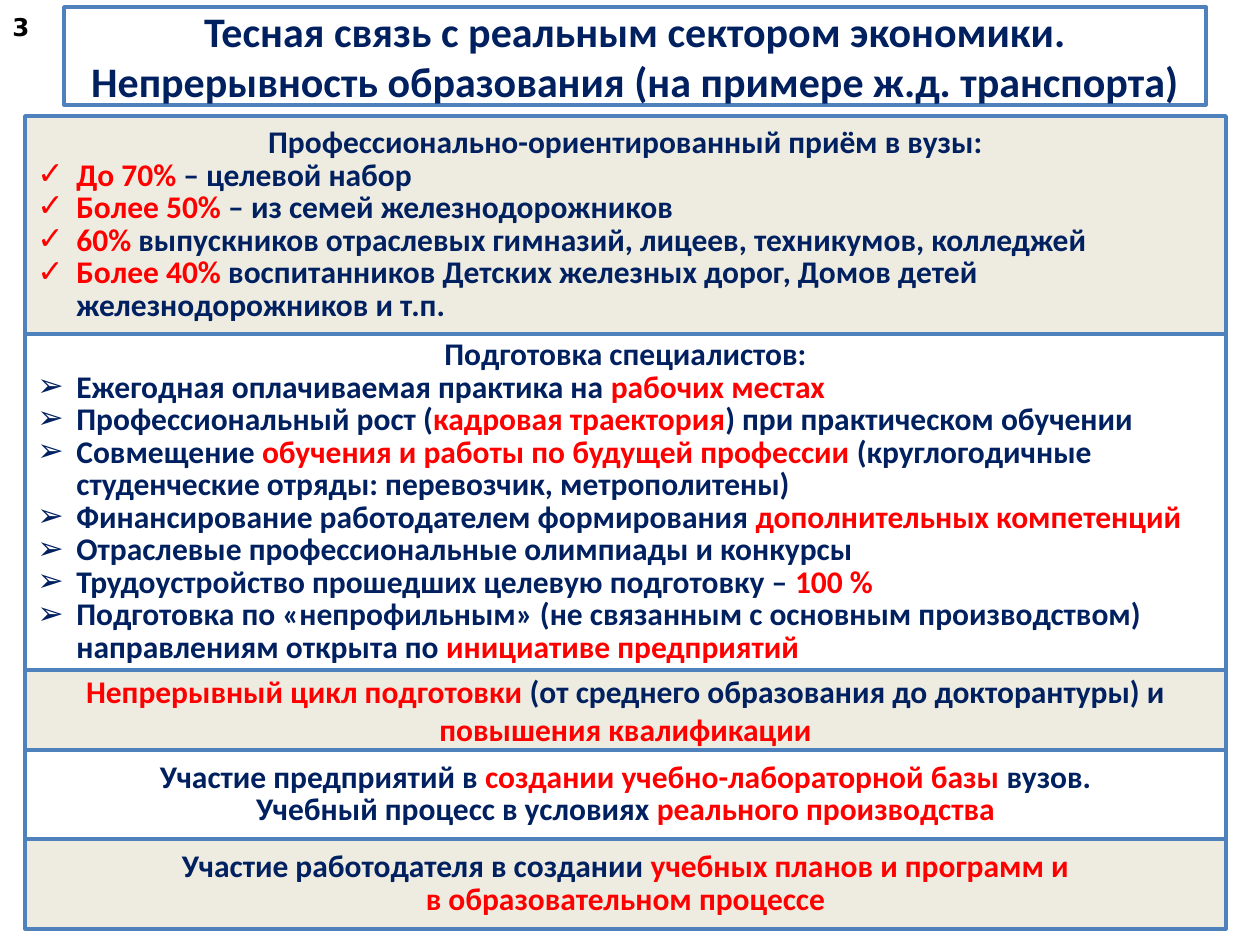
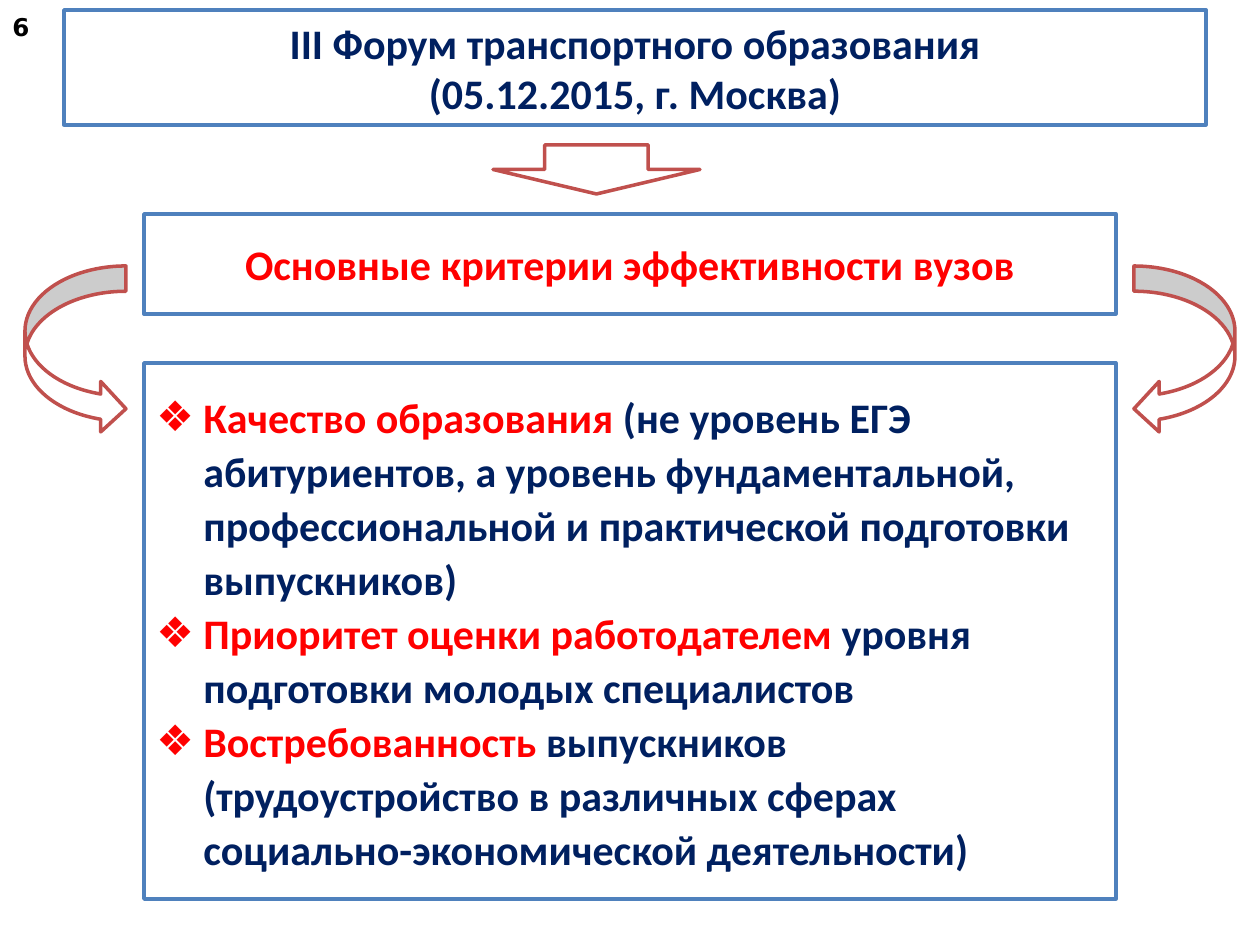
"""Build two slides on how transport education is tied to the industry."""
from lxml import etree
from pptx import Presentation
from pptx.dml.color import RGBColor
from pptx.enum.shapes import MSO_SHAPE
from pptx.enum.text import MSO_ANCHOR, PP_ALIGN
from pptx.oxml.ns import qn
from pptx.util import Pt

EMU_PER_PX = 914400 / 126
SLIDE_WIDTH, SLIDE_HEIGHT = 1260, 945

NAVY = RGBColor(0x00, 0x20, 0x60)
RED = RGBColor(0xFF, 0x00, 0x00)
BLACK = RGBColor(0x00, 0x00, 0x00)
WHITE = RGBColor(0xFF, 0xFF, 0xFF)
BEIGE = RGBColor(0xEE, 0xEC, 0xE1)
BLUE = RGBColor(0x4F, 0x81, 0xBD)
BRICK = RGBColor(0xC0, 0x50, 0x4D)

RECTANGLE = MSO_SHAPE.RECTANGLE
DOWN_ARROW = MSO_SHAPE.DOWN_ARROW
CURVED_RIGHT = MSO_SHAPE.CURVED_RIGHT_ARROW
CURVED_LEFT = MSO_SHAPE.CURVED_LEFT_ARROW
CENTER, LEFT = PP_ALIGN.CENTER, PP_ALIGN.LEFT
MIDDLE = MSO_ANCHOR.MIDDLE

BODY_FONT, SYMBOL_FONT = "Calibri", "DejaVu Sans"
CHECK, ARROWHEAD, DIAMOND = "✓", "➢", "❖"

LINKS_TITLE = ("Тесная связь с реальным сектором экономики.\n"
               "Непрерывность образования (на примере ж.д. транспорта)")
LINKS_BANDS = [
    dict(height=218, bullet=CHECK, heading=["Профессионально-ориентированный приём в вузы:"],
         items=["*До 70% *– целевой набор",
                "*Более 50% *– из семей железнодорожников",
                "*60% *выпускников отраслевых гимназий, лицеев, техникумов, колледжей",
                "*Более 40% *воспитанников Детских железных дорог, Домов детей "
                "железнодорожников и т.п."]),
    dict(height=336, bullet=ARROWHEAD, heading=["Подготовка специалистов:"],
         items=["Ежегодная оплачиваемая практика на *рабочих местах*",
                "Профессиональный рост (*кадровая траектория*) при практическом обучении",
                "Совмещение *обучения и работы по будущей профессии *(круглогодичные\n"
                "студенческие отряды: перевозчик, метрополитены)",
                "Финансирование работодателем формирования *дополнительных компетенций*",
                "Отраслевые профессиональные олимпиады и конкурсы",
                "Трудоустройство прошедших целевую подготовку – *100 %*",
                "Подготовка по «непрофильным» (не связанным с основным производством)\n"
                "направлениям открыта по *инициативе предприятий*"]),
    dict(height=80, spacing=21.6,
         heading=["*Непрерывный цикл подготовки *(от среднего образования до докторантуры) и "
                  "*повышения квалификации*"]),
    dict(height=89,
         heading=["Участие предприятий в *создании учебно-лабораторной базы *вузов.",
                  "Учебный процесс в условиях *реального производства*"]),
    dict(height=90,
         heading=["Участие работодателя в создании *учебных планов и программ и*",
                  "*в образовательном процессе*"]),
]

FORUM_TITLE = "III Форум транспортного образования\n(05.12.2015, г. Москва)"
CRITERIA_HEADING = "*Основные критерии эффективности вузов*"
CRITERIA = [
    "*Качество образования *(не уровень ЕГЭ абитуриентов, а уровень фундаментальной,\n"
    "профессиональной и практической подготовки\nвыпускников)",
    "*Приоритет оценки работодателем *уровня\nподготовки молодых специалистов",
    "*Востребованность *выпускников (трудоустройство в различных сферах "
    "социально-экономической деятельности)",
]
FORUM_ARROWS = [
    (DOWN_ARROW, (493, 145, 207, 49)),
    (CURVED_RIGHT, (25, 266, 101, 168)),
    (CURVED_LEFT, (1134, 266, 101, 168)),
]


def px(value):
    return round(value * EMU_PER_PX)


def add_box(slide, bounds, kind=RECTANGLE, fill=WHITE, line=BLUE):
    shape = slide.shapes.add_shape(kind, *map(px, bounds))
    shape.shadow.inherit = False
    shape.fill.solid()
    shape.fill.fore_color.rgb = fill
    shape.line.color.rgb = line
    shape.line.width = Pt(2)
    return shape


def set_inset(frame, across, down):
    frame.margin_left = frame.margin_right = px(across)
    frame.margin_top = frame.margin_bottom = px(down)


def add_bullet(paragraph, bullet, indent, color):
    properties = paragraph._p.get_or_add_pPr()
    properties.set("marL", str(px(indent)))
    properties.set("indent", str(-px(indent)))
    bullet_color = etree.SubElement(properties, qn("a:buClr"))
    etree.SubElement(bullet_color, qn("a:srgbClr"), val=str(color))
    etree.SubElement(properties, qn("a:buFont"), typeface=SYMBOL_FONT)
    etree.SubElement(properties, qn("a:buChar"), char=bullet)


def write(shape, texts, size=18, color=NAVY, font=BODY_FONT, align=CENTER,
          spacing=None, bullet=None, indent=0):
    """Append one paragraph per text, with words between asterisks in red."""
    frame = shape.text_frame
    frame.word_wrap = True
    frame.vertical_anchor = MIDDLE
    for text in texts:
        last = frame.paragraphs[-1]
        paragraph = frame.add_paragraph() if last.runs else last
        paragraph.alignment = align
        if spacing:
            paragraph.line_spacing = Pt(spacing)
        if bullet:
            add_bullet(paragraph, bullet, indent, RED if text.startswith("*") else color)
        for part_number, part in enumerate(text.split("*")):
            for line_number, words in enumerate(part.split("\n")):
                if line_number:
                    paragraph.add_line_break()
                if words:
                    run = paragraph.add_run()
                    run.text = words
                    run.font.name, run.font.size, run.font.bold = font, Pt(size), True
                    run.font.color.rgb = RED if part_number % 2 else color


def add_titled_slide(presentation, number, title, top, height):
    slide = presentation.slides.add_slide(presentation.slide_layouts[6])
    number_box = slide.shapes.add_textbox(*map(px, (0, 5, 42, 44)))
    set_inset(number_box.text_frame, 0, 0)
    write(number_box, [number], size=14, color=BLACK, font=SYMBOL_FONT)
    title_box = add_box(slide, (64, top, 1142, height))
    set_inset(title_box.text_frame, 8, 4)
    write(title_box, [title], size=24)
    return slide


def build_links_slide(presentation):
    slide = add_titled_slide(presentation, "3", LINKS_TITLE, 7, 98)
    top = 116
    for index, band in enumerate(LINKS_BANDS):
        fill = WHITE if index % 2 else BEIGE
        box = add_box(slide, (25, top, 1201, band["height"]), fill=fill)
        spacing = band.get("spacing", 18.6)
        write(box, band["heading"], spacing=spacing)
        write(box, band.get("items", []), align=LEFT, spacing=spacing,
              bullet=band.get("bullet"), indent=39)
        top += band["height"]


def build_forum_slide(presentation):
    slide = add_titled_slide(presentation, "6", FORUM_TITLE, 10, 115)
    heading_box = add_box(slide, (144, 214, 972, 100))
    write(heading_box, [CRITERIA_HEADING], size=24)
    criteria_box = add_box(slide, (144, 363, 972, 536))
    write(criteria_box, CRITERIA, size=24, align=LEFT, spacing=30.8, bullet=DIAMOND, indent=47)
    for kind, bounds in FORUM_ARROWS:
        add_box(slide, bounds, kind=kind, line=BRICK)


def main():
    presentation = Presentation()
    presentation.slide_width = px(SLIDE_WIDTH)
    presentation.slide_height = px(SLIDE_HEIGHT)
    build_links_slide(presentation)
    build_forum_slide(presentation)
    presentation.save("out.pptx")


if __name__ == "__main__":
    main()
